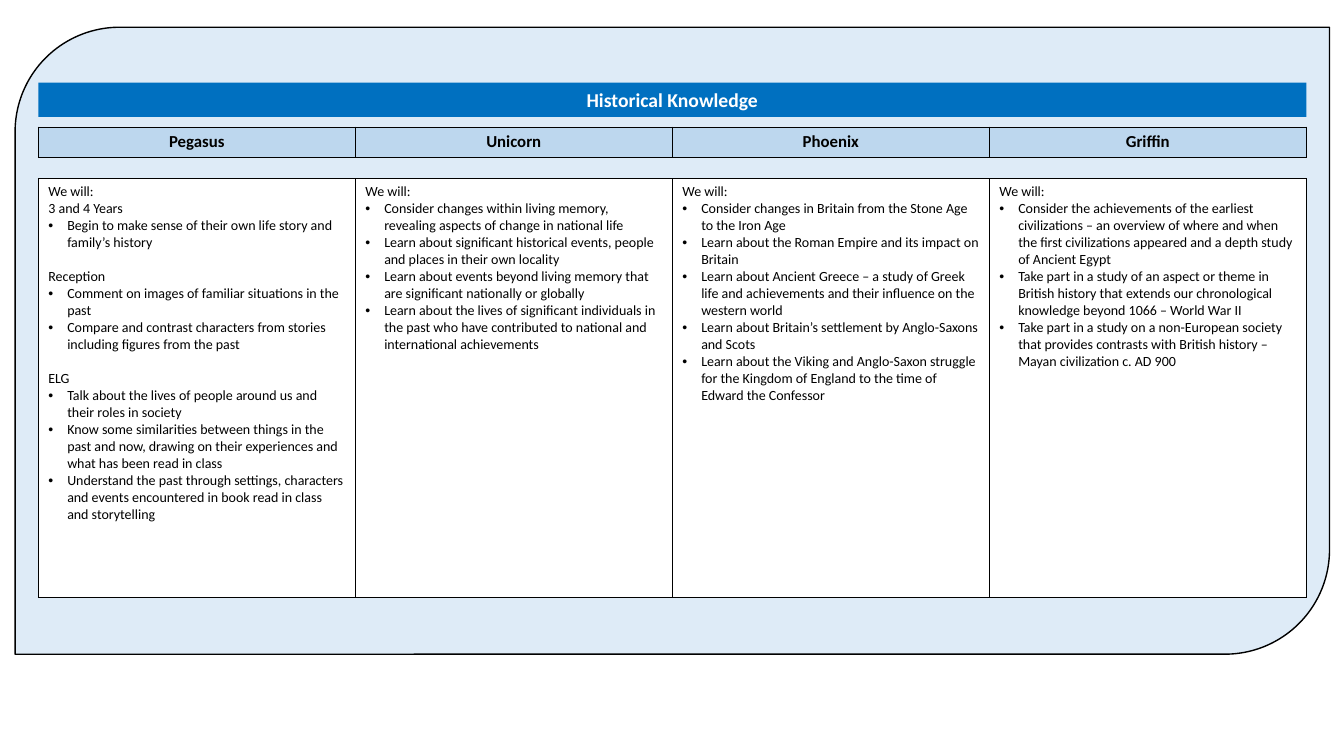
from lxml.etree import SubElement
from pptx import Presentation
from pptx.dml.color import RGBColor
from pptx.enum.shapes import MSO_SHAPE
from pptx.enum.text import MSO_ANCHOR, MSO_AUTO_SIZE, PP_ALIGN
from pptx.oxml.ns import qn
from pptx.util import Pt

COLOURS = {
    "panel": "DEEBF7",
    "banner": "0070C0",
    "header": "BDD7EE",
    "body": "FFFFFF",
    "ink": "000000",
}
LEFT, WIDTH = 27.36, 905.76
LINE_GAP = 12.2

# Each class has groups of (optional heading, bullet points)
CLASSES = {
    "Pegasus": [
        ("3 and 4 Years", [
            "Begin to make sense of their own life story and family’s history",
        ]),
        ("Reception", [
            "Comment on images of familiar situations in the past",
            "Compare and contrast characters from stories including figures from the past",
        ]),
        ("ELG", [
            "Talk about the lives of people around us and their roles in society",
            "Know some similarities between things in the past and now, drawing on their "
            "experiences and what has been read in class",
            "Understand the past through settings, characters and events encountered in "
            "book read in class and storytelling",
        ]),
    ],
    "Unicorn": [(None, [
        "Consider changes within living memory, revealing aspects of change in national life",
        "Learn about significant historical events, people and places in their own locality",
        "Learn about events beyond living memory that are significant nationally or globally",
        "Learn about the lives of significant individuals in the past who have contributed "
        "to national and international achievements",
    ])],
    "Phoenix": [(None, [
        "Consider changes in Britain from the Stone Age to the Iron Age",
        "Learn about the Roman Empire and its impact on Britain",
        "Learn about Ancient Greece – a study of Greek life and achievements and their "
        "influence on the western world",
        "Learn about Britain’s settlement by Anglo-Saxons and Scots",
        "Learn about the Viking and Anglo-Saxon struggle for the Kingdom of England to the "
        "time of Edward the Confessor",
    ])],
    "Griffin": [(None, [
        "Consider the achievements of the earliest civilizations – an overview of where and "
        "when the first civilizations appeared and a depth study of Ancient Egypt",
        "Take part in a study of an aspect or theme in British history that extends our "
        "chronological knowledge beyond 1066 – World War II",
        "Take part in a study on a non-European society that provides contrasts with British "
        "history – Mayan civilization c. AD 900",
    ])],
}


def colour(name):
    return RGBColor.from_string(COLOURS[name])


def apply_format(target, values):
    for name, value in values.items():
        setattr(target, name, value)


class SlideBuilder:
    def __init__(self, slide, font="Calibri"):
        self.slide = slide
        self.font = font

    def add_text(self, paragraph, text, size, ink="ink", bold=False, **values):
        run = paragraph.add_run()
        run.text = text
        apply_format(run.font, {"name": self.font, "size": Pt(size), "bold": bold})
        run.font.color.rgb = colour(ink)
        apply_format(paragraph, values)

    def panel(self, left, top, width, height):
        shape = self.slide.shapes.add_shape(
            MSO_SHAPE.ROUND_2_DIAG_RECTANGLE, Pt(left), Pt(top), Pt(width), Pt(height))
        shape.shadow.inherit = False
        shape.fill.solid()
        shape.fill.fore_color.rgb = colour("panel")
        shape.line.color.rgb = colour("ink")
        shape.line.width = Pt(1)

    def title(self, text, left, top, width, height):
        shape = self.slide.shapes.title
        apply_format(shape, {"left": Pt(left), "top": Pt(top),
                             "width": Pt(width), "height": Pt(height)})
        shape.fill.solid()
        shape.fill.fore_color.rgb = colour("banner")
        apply_format(shape.text_frame, {"auto_size": MSO_AUTO_SIZE.NONE, "word_wrap": True,
                                        "vertical_anchor": MSO_ANCHOR.MIDDLE})
        self.add_text(shape.text_frame.paragraphs[0], text, 14, "body", True,
                      alignment=PP_ALIGN.CENTER)
        # Bring the banner in front of the panel
        shape.element.getparent().append(shape.element)

    def table_row(self, top, height, fill, columns):
        frame = self.slide.shapes.add_table(
            1, columns, Pt(LEFT), Pt(top), Pt(WIDTH), Pt(height))
        apply_format(frame.table, {"first_row": False, "horz_banding": False})
        cells = list(frame.table.rows[0].cells)
        for cell in cells:
            self.borders(cell)
            cell.fill.solid()
            cell.fill.fore_color.rgb = colour(fill)
        return cells

    def borders(self, cell):
        properties = cell._tc.get_or_add_tcPr()
        for side in ("lnL", "lnR", "lnT", "lnB"):
            line = SubElement(properties, qn(f"a:{side}"), w=str(Pt(0.5)))
            fill = SubElement(line, qn("a:solidFill"))
            SubElement(fill, qn("a:srgbClr"), val=COLOURS["ink"])

    def bullet(self, paragraph, text):
        self.add_text(paragraph, text, 10)
        properties = paragraph._p.get_or_add_pPr()
        properties.set("marL", str(Pt(13.5)))
        properties.set("indent", str(Pt(-13.5)))
        SubElement(properties, qn("a:buFont"), typeface="Arial")
        SubElement(properties, qn("a:buChar"), char="•")

    def objectives(self, cell, groups):
        text_frame = cell.text_frame
        self.add_text(text_frame.paragraphs[0], "We will:", 10)
        for index, (heading, points) in enumerate(groups):
            if heading:
                self.add_text(text_frame.add_paragraph(), heading, 10,
                              space_before=Pt(LINE_GAP if index else 0))
            for point in points:
                self.bullet(text_frame.add_paragraph(), point)


def main():
    presentation = Presentation()
    apply_format(presentation, {"slide_width": Pt(960), "slide_height": Pt(540)})
    slide = presentation.slides.add_slide(presentation.slide_layouts[5])
    builder = SlideBuilder(slide)

    # Background panel
    builder.panel(10.8, 19.44, 938.88, 447.84)

    # Class names
    headers = builder.table_row(90.72, 21.6, "header", len(CLASSES))
    for cell, name in zip(headers, CLASSES):
        builder.add_text(cell.text_frame.paragraphs[0], name, 12, bold=True,
                         alignment=PP_ALIGN.CENTER)

    # Learning objectives
    bodies = builder.table_row(127.44, 299.52, "body", len(CLASSES))
    for cell, groups in zip(bodies, CLASSES.values()):
        builder.objectives(cell, groups)

    # Title banner
    builder.title("Historical Knowledge", LEFT, 59.04, WIDTH, 24.48)

    presentation.save("out.pptx")


if __name__ == "__main__":
    main()
